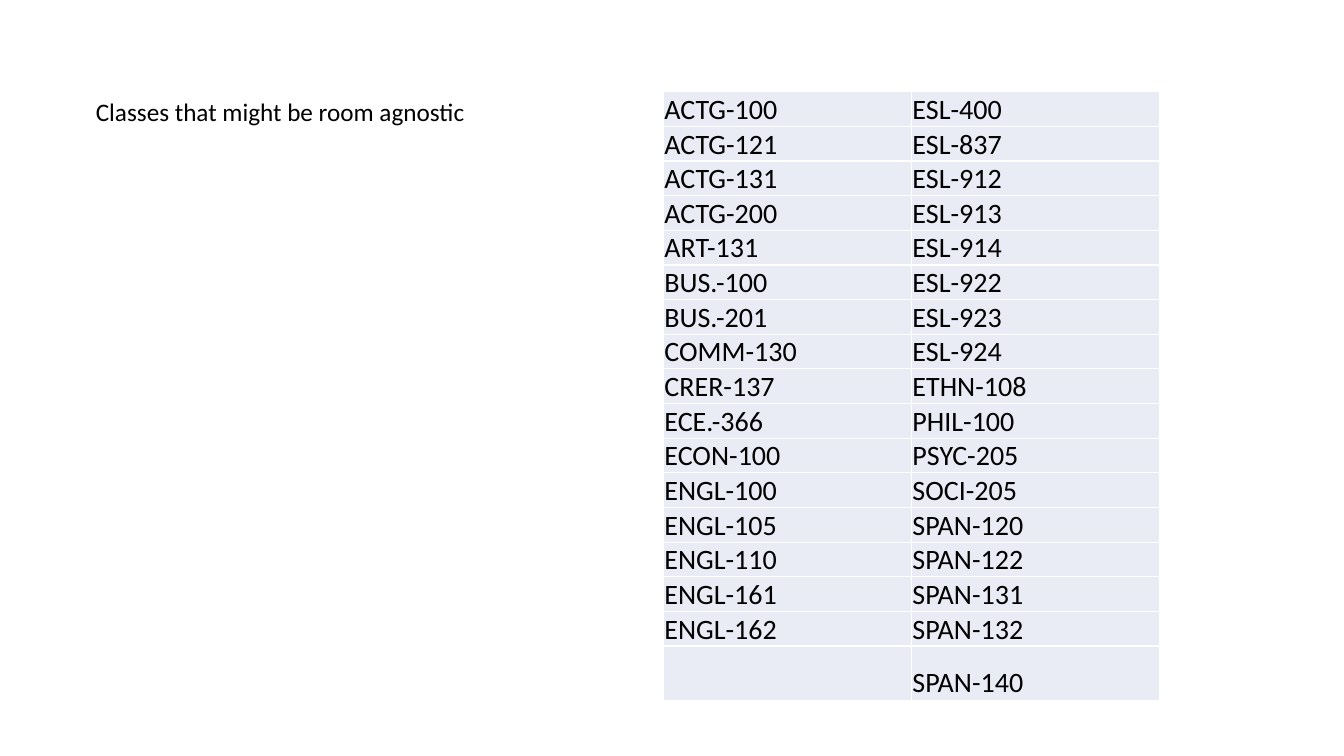
"""Build a slide listing the classes that might be room agnostic."""
import itertools

import pptx
import pptx.dml.color
import pptx.enum.text
import pptx.oxml
import pptx.oxml.ns
import pptx.util

Inches = pptx.util.Inches
BLACK = pptx.dml.color.RGBColor(0x00, 0x00, 0x00)
WHITE = pptx.dml.color.RGBColor(0xFF, 0xFF, 0xFF)
PALE_BLUE = pptx.dml.color.RGBColor(0xE9, 0xEB, 0xF5)
FONT = "Calibri"

LEFT_CLASSES = [
    "ACTG-100", "ACTG-121", "ACTG-131", "ACTG-200", "ART-131", "BUS.-100",
    "BUS.-201", "COMM-130", "CRER-137", "ECE.-366", "ECON-100", "ENGL-100",
    "ENGL-105", "ENGL-110", "ENGL-161", "ENGL-162",
]
RIGHT_CLASSES = [
    "ESL-400", "ESL-837", "ESL-912", "ESL-913", "ESL-914", "ESL-922",
    "ESL-923", "ESL-924", "ETHN-108", "PHIL-100", "PSYC-205", "SOCI-205",
    "SPAN-120", "SPAN-122", "SPAN-131", "SPAN-132", "SPAN-140",
]


def set_text(tf, text, size=20, color=BLACK, font=FONT):
    """Write one left-aligned run into a text frame."""
    p = tf.paragraphs[0]
    p.alignment = pptx.enum.text.PP_ALIGN.LEFT
    r = p.add_run()
    r.text = text
    r.font.size = pptx.util.Pt(size)
    r.font.name = font
    r.font.color.rgb = color


def set_borders(cell, color=WHITE, width=1):
    """Draw all four borders of a cell, placed ahead of its fill."""
    tc_pr = cell.fill._xPr
    for i, side in enumerate(("lnL", "lnR", "lnT", "lnB")):
        ln = pptx.oxml.parse_xml(
            f'<a:{side} {pptx.oxml.ns.nsdecls("a")} w="{pptx.util.Pt(width)}">'
            f'<a:solidFill><a:srgbClr val="{color}"/></a:solidFill></a:{side}>'
        )
        tc_pr.insert(i, ln)


def format_cell(cell, text):
    """Fill and border a cell and write its class code."""
    cell.fill.solid()
    cell.fill.fore_color.rgb = PALE_BLUE
    set_borders(cell)
    if text:
        cell.vertical_anchor = pptx.enum.text.MSO_ANCHOR.BOTTOM
        cell.margin_left = cell.margin_right = cell.margin_top = Inches(0.01)
        cell.margin_bottom = 0
        set_text(cell.text_frame, text)


def add_title(s, text):
    """Move the title placeholder to the left and write the heading."""
    sp = s.shapes.title
    sp.left, sp.top = Inches(0.85), Inches(0.91)
    sp.width, sp.height = Inches(3.9), Inches(0.4)
    tf = sp.text_frame
    tf.word_wrap = False
    tf.auto_size = pptx.enum.text.MSO_AUTO_SIZE.SHAPE_TO_FIT_TEXT
    tf.vertical_anchor = pptx.enum.text.MSO_ANCHOR.TOP
    set_text(tf, text, size=18)


def add_class_table(s, rows):
    """Add the two-column table of classes, with a taller last row."""
    table = s.shapes.add_table(
        len(rows), 2, Inches(6.58), Inches(0.91), Inches(4.92), Inches(5.98)
    ).table
    table.first_row = table.horz_banding = False
    for row, texts in zip(table.rows, rows):
        row.height = Inches(0.34)
        for cell, text in zip(row.cells, texts):
            format_cell(cell, text)
    table.rows[len(rows) - 1].height = Inches(0.54)


def main():
    """Build and save the slide."""
    prs = pptx.Presentation()
    prs.slide_width, prs.slide_height = Inches(13.33), Inches(7.5)
    s = prs.slides.add_slide(prs.slide_layouts.get_by_name("Title Only"))
    add_title(s, "Classes that might be room agnostic")
    rows = itertools.zip_longest(LEFT_CLASSES, RIGHT_CLASSES, fillvalue="")
    add_class_table(s, list(rows))
    prs.save("out.pptx")


if __name__ == "__main__":
    main()
